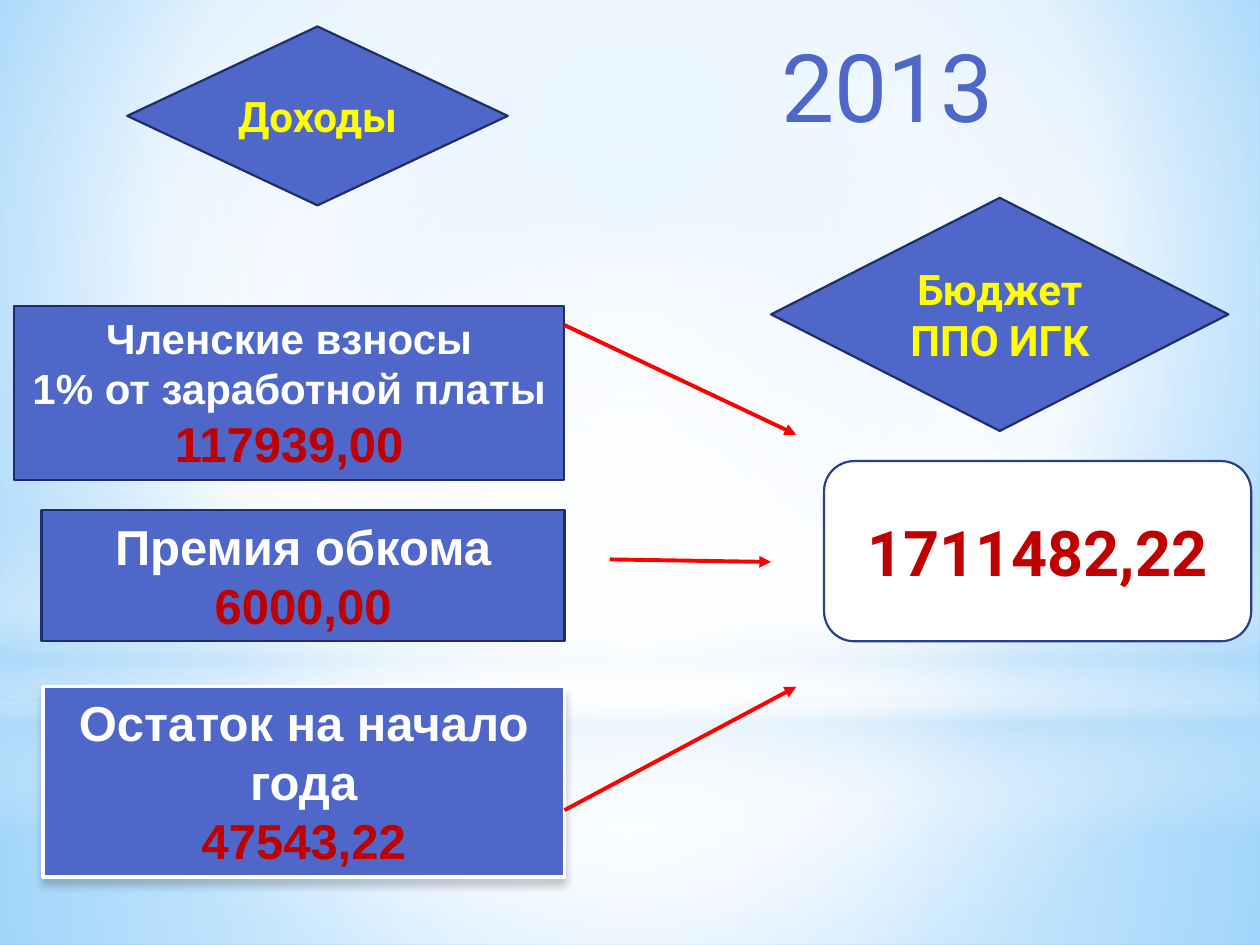
"""Builds the 2013 income slide on a grid of 100 columns by 75 rows."""
import pptx
import pptx.dml.color
import pptx.enum.shapes
import pptx.enum.text
import pptx.oxml
import pptx.oxml.ns
import pptx.util

RGB = pptx.dml.color.RGBColor
SHAPE = pptx.enum.shapes.MSO_SHAPE
ANCHOR = pptx.enum.text.MSO_ANCHOR
qn = pptx.oxml.ns.qn
BLUE = RGB(0x4E, 0x67, 0xC8)
NAVY = RGB(0x1F, 0x2E, 0x69)
ROYAL = RGB(0x2A, 0x3E, 0x8E)
WHITE = RGB(0xFF, 0xFF, 0xFF)
BLACK = RGB(0, 0, 0)
RED = RGB(0xFF, 0, 0)
CRIMSON = RGB(0xC0, 0, 0)
YELLOW = RGB(0xFF, 0xFF, 0)
PALE = RGB(0xB4, 0xDC, 0xFA)
SKY = RGB(0x9E, 0xD5, 0xFF)
AZURE = RGB(0x5B, 0xB9, 0xFF)
CENTRE = (50, 50, 50, 50)


class Deck:
    """Holds the style and the current slide."""

    def __init__(self):
        self.prs = pptx.Presentation()
        self.prs.slide_width = pptx.util.Inches(10)
        self.prs.slide_height = pptx.util.Inches(7.5)
        self.col = self.prs.slide_width / 100
        self.row = self.prs.slide_height / 75
        self.s = self.prs.slides.add_slide(self.prs.slide_layouts[5])

    def grid(self, x, y, *rest):
        units = (self.col, self.row) * 2
        return [round(v * u) for v, u in zip((x, y, *rest), units)]

    def xml(self, text):
        return pptx.oxml.parse_xml(text.replace(">", f" {pptx.oxml.ns.nsdecls('a')}>", 1))

    def colour(self, rgb, alpha):
        return f'<a:srgbClr val="{rgb}"><a:alpha val="{alpha * 1000}"/></a:srgbClr>'

    def gradient(self, parent, stops, focus):
        gs = "".join(f'<a:gs pos="{pos * 1000}">{self.colour(rgb, alpha)}</a:gs>'
                     for pos, rgb, alpha in stops)
        if focus:
            sides = " ".join(f'{k}="{v * 1000}"' for k, v in zip("ltrb", focus))
            way = f'<a:path path="circle"><a:fillToRect {sides}/></a:path>'
        else:
            way = '<a:lin ang="5400000" scaled="0"/>'
        solid = parent.find(qn("a:solidFill"))
        parent.replace(solid, self.xml(f"<a:gradFill><a:gsLst>{gs}</a:gsLst>{way}</a:gradFill>"))

    def background(self, stops, focus):
        self.s.background.fill.solid()
        self.gradient(self.s.element.find(".//" + qn("p:bgPr")), stops, focus)

    def glow(self, kind, box, stops, focus=CENTRE):
        sp = self.s.shapes.add_shape(kind, *self.grid(*box))
        sp.shadow.inherit = False
        sp.line.fill.background()
        sp.fill.solid()
        self.gradient(sp.element.spPr, stops, focus)

    def put_text(self, tf, lines, font, anchor):
        for name, value in {"word_wrap": True, "vertical_anchor": anchor,
                            "auto_size": pptx.enum.text.MSO_AUTO_SIZE.NONE}.items():
            setattr(tf, name, value)
        for i, (text, size, rgb) in enumerate(lines):
            p = tf.add_paragraph() if i else tf.paragraphs[0]
            p.alignment = pptx.enum.text.PP_ALIGN.CENTER
            r = p.add_run()
            r.text = text
            for name, value in {**font, "size": pptx.util.Pt(size)}.items():
                setattr(r.font, name, value)
            r.font.color.rgb = rgb

    def title(self, box, line):
        sp = self.s.shapes.title
        for name, value in zip(("left", "top", "width", "height"), self.grid(*box)):
            setattr(sp, name, value)
        self.put_text(sp.text_frame, [line], {"name": "Roboto", "bold": False}, ANCHOR.TOP)
        sp.element.getparent().append(sp.element)

    def block(self, kind, box, lines, font="Roboto", anchor=ANCHOR.MIDDLE,
              fill=BLUE, line=NAVY, width=1.25):
        sp = self.s.shapes.add_shape(kind, *self.grid(*box))
        sp.shadow.inherit = False
        sp.fill.solid()
        sp.fill.fore_color.rgb = fill
        sp.line.color.rgb = line
        sp.line.width = pptx.util.Pt(width)
        self.put_text(sp.text_frame, lines, {"name": font, "bold": True}, anchor)
        return sp

    def income(self, box, lines, **style):
        return self.block(SHAPE.RECTANGLE, box, lines, "Arial", ANCHOR.TOP, **style)

    def drop_shadow(self, sp, alpha, blur, dist):
        blur, dist = pptx.util.Pt(blur), pptx.util.Pt(dist)
        sp.element.spPr.find(qn("a:effectLst")).append(self.xml(
            f'<a:outerShdw blurRad="{blur}" dist="{dist}" dir="5400000" rotWithShape="0">'
            f'{self.colour(BLACK, alpha)}</a:outerShdw>'))

    def arrow(self, start, end):
        sp = self.s.shapes.add_connector(pptx.enum.shapes.MSO_CONNECTOR.STRAIGHT,
                                         *self.grid(*start, *end))
        sp.line.color.rgb = RED
        sp.line.width = pptx.util.Pt(2.25)
        spPr = sp.element.spPr
        spPr.find(qn("a:ln")).append(self.xml('<a:tailEnd type="triangle"></a:tailEnd>'))
        spPr.append(self.xml("<a:effectLst></a:effectLst>"))


def main():
    deck = Deck()
    deck.background([(0, SKY, 100), (60, WHITE, 100), (100, AZURE, 100)], (20, 10, 20, 60))
    deck.glow(SHAPE.RECTANGLE, (0, 55.8, 100, 19.2),
              [(0, WHITE, 91), (37, WHITE, 76), (100, PALE, 79)])
    deck.glow(SHAPE.RECTANGLE, (0, 0, 100, 55.8),
              [(0, WHITE, 89), (48, WHITE, 62), (100, PALE, 79)])
    deck.glow(SHAPE.RECTANGLE, (0, 41.2, 100, 25),
              [(0, WHITE, 0), (29, WHITE, 30), (45, PALE, 40),
               (55, WHITE, 26), (65, PALE, 60), (100, WHITE, 0)], None)
    deck.glow(SHAPE.OVAL, (0, 17.5, 100, 55.8), [(0, WHITE, 100), (56, WHITE, 0)])

    deck.title((54.7, 1.7, 31.5, 10.1), ("2013", 54, BLUE))
    balance = deck.income((3.4, 54.5, 41.4, 15.1),
                          [("Остаток на начало года", 28, WHITE), ("47543,22", 28, CRIMSON)],
                          line=WHITE, width=2)
    deck.drop_shadow(balance, 20, 5, 4)
    deck.income((3.3, 40.5, 41.5, 10.4),
                [("Премия обкома", 28, WHITE), ("6000,00", 28, CRIMSON)])
    deck.income((1.1, 24.3, 43.7, 13.8),
                [("Членские взносы", 24, WHITE), ("1% от заработной платы", 24, WHITE),
                 ("117939,00", 28, CRIMSON)])

    deck.block(SHAPE.FLOWCHART_DECISION, (10.1, 2.1, 30.2, 14.2), [("Доходы", 24, YELLOW)])
    deck.block(SHAPE.FLOWCHART_DECISION, (61.2, 15.7, 36.3, 18.5),
               [("Бюджет ППО ИГК", 24, YELLOW)])
    deck.block(SHAPE.ROUNDED_RECTANGLE, (65.4, 36.6, 33.9, 14.3),
               [("1711482,22", 36, CRIMSON)], fill=WHITE, line=ROYAL)

    for start, end in [((44.8, 25.8), (63.2, 34.5)), ((48.4, 44.4), (61.2, 44.6)),
                       ((44.8, 64.3), (63.2, 54.5))]:
        deck.arrow(start, end)
    deck.prs.save("out.pptx")


if __name__ == "__main__":
    main()
